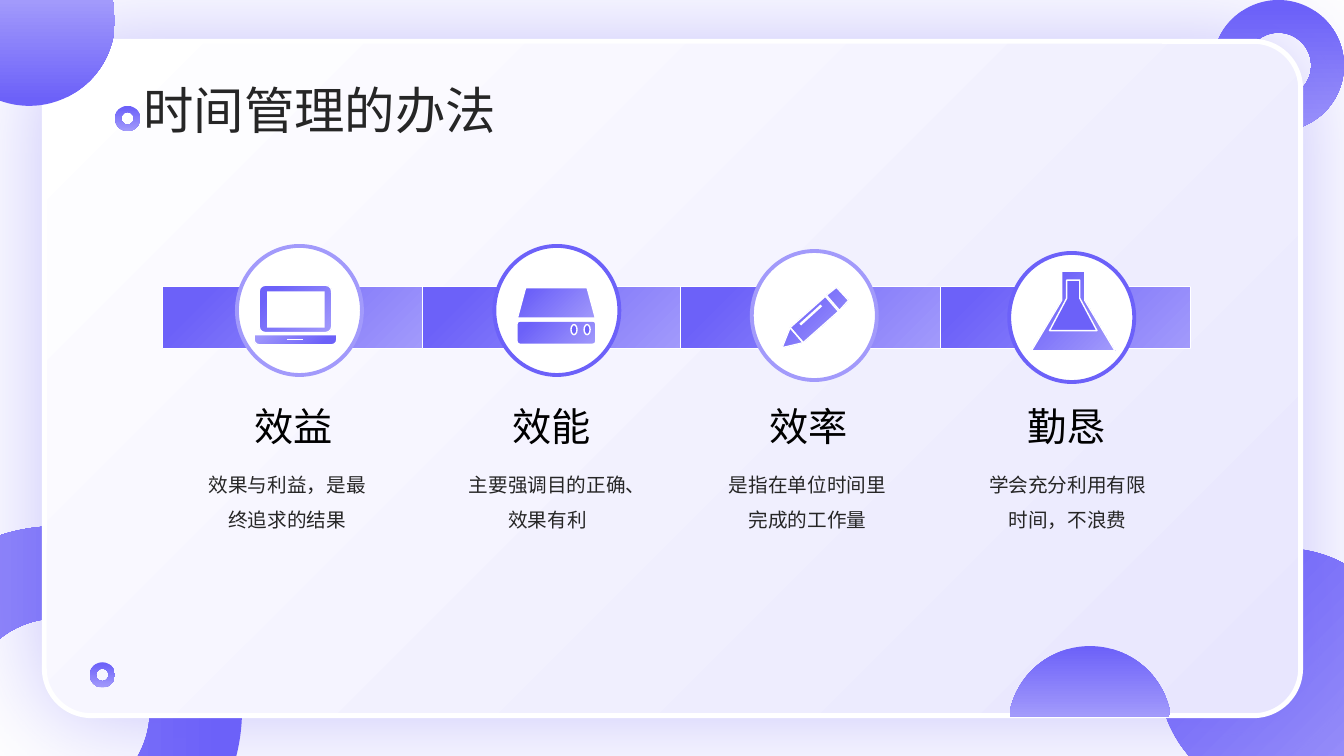
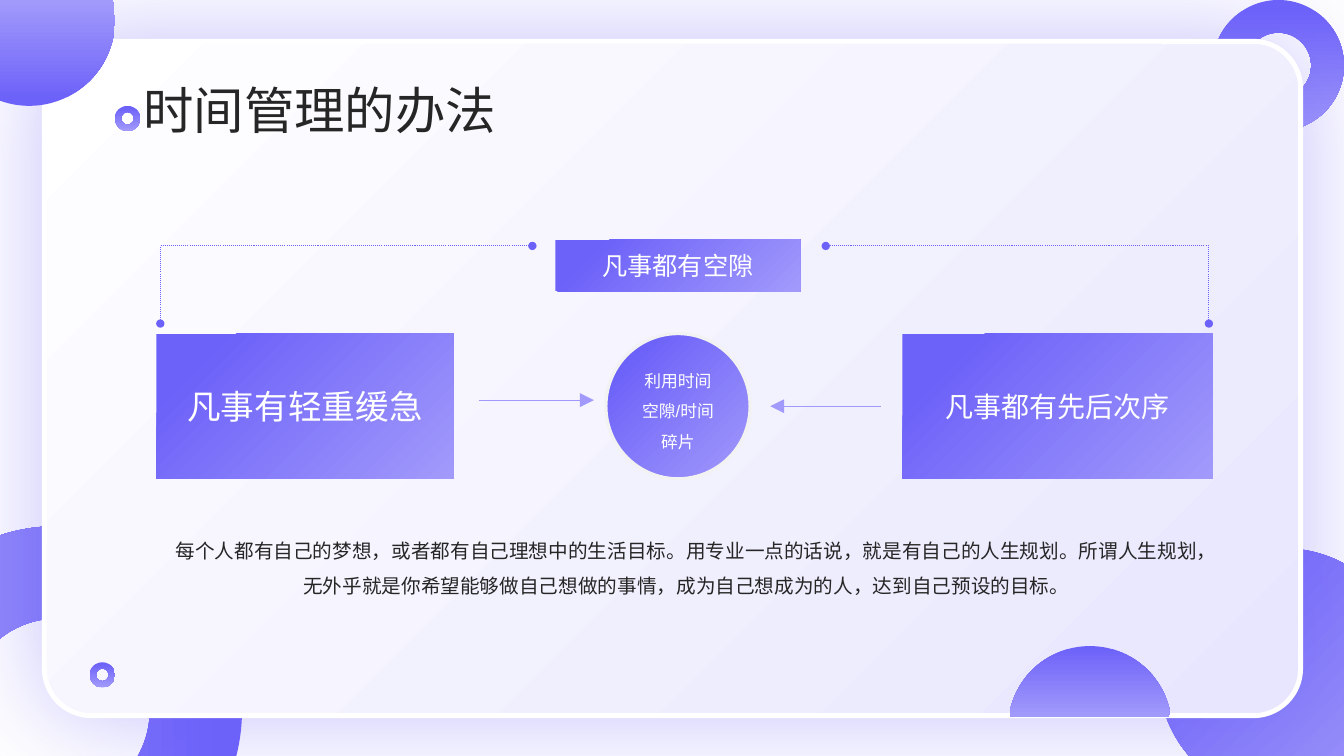
import math
from collections import namedtuple
from dataclasses import dataclass

import lxml.etree
import pptx
import pptx.dml.color
import pptx.enum.dml
import pptx.enum.shapes
import pptx.enum.text
import pptx.oxml.ns
import pptx.util

Inches = pptx.util.Inches
Preset = pptx.enum.shapes.MSO_SHAPE
Align = pptx.enum.text.PP_ALIGN
Anchor = pptx.enum.text.MSO_ANCHOR
qn = pptx.oxml.ns.qn
Box = namedtuple("Box", "left top width height")


@dataclass(frozen=True)
class Theme:
    deep: str = "6C61F9"
    light: str = "A29AFB"
    mist: str = "E8E6FE"
    white: str = "FFFFFF"
    rim: str = "F2F2F2"
    ink: str = "262626"
    black: str = "000000"
    title_font: str = "Noto Sans CJK SC"
    body_font: str = "Arial"
    title: int = 36
    heading: int = 28
    block_large: int = 24
    block: int = 20
    block_small: int = 18
    body: int = 14
    disc: int = 12


THEME = Theme()
SLIDE = Box(0, 0, 13.33, 7.5)
TITLE = Box(1.32, 0.73, 6, 0.71)


@dataclass(frozen=True)
class Gradient:
    """Two colours, the place of the first in percent, clockwise degrees."""
    angle: int = 45
    start: int = 15
    first: str = THEME.deep
    last: str = THEME.light


DIAGONAL = Gradient()
DOWN = Gradient(90, 5)
UP = Gradient(270, 5)


# Drawing helpers
def colour(code):
    return pptx.dml.color.RGBColor.from_string(code)


def shifted(box, left, top, width, height):
    return Box(box.left + left, box.top + top, width, height)


def paint(shape, fill=None, line=None, weight=1):
    shape.shadow.inherit = False
    if isinstance(fill, Gradient):
        shape.fill.gradient()
        shape.fill.gradient_angle = (360 - fill.angle) % 360
        first, last = shape.fill.gradient_stops
        first.position, first.color.rgb = fill.start / 100, colour(fill.first)
        last.position, last.color.rgb = 1, colour(fill.last)
    elif fill:
        shape.fill.solid()
        shape.fill.fore_color.rgb = colour(fill)
    else:
        shape.fill.background()
    if line:
        shape.line.color.rgb = colour(line)
        shape.line.width = pptx.util.Pt(weight)
    else:
        shape.line.fill.background()
    return shape


def add_preset(page, preset, box, fill, adjust=(), **outline):
    shape = page.shapes.add_shape(preset, *map(Inches, box))
    for index, value in enumerate(adjust):
        shape.adjustments[index] = value
    return paint(shape, fill, **outline)


def add_outline(page, origin, contours, fill=None, close=True, **outline):
    def place(point):
        return Inches(origin.left + point[0]), Inches(origin.top + point[1])

    builder = page.shapes.build_freeform(*place(contours[0][0]))
    for index, contour in enumerate(contours):
        if index:
            builder.move_to(*place(contour[0]))
        builder.add_line_segments([place(point) for point in contour[1:]], close)
    return paint(builder.convert_to_shape(), fill, **outline)


def add_line(page, origin, start, end, line, weight):
    ends = [Inches(base + offset) for point in (start, end)
            for base, offset in zip(origin, point)]
    connector = page.shapes.add_connector(
        pptx.enum.shapes.MSO_CONNECTOR.STRAIGHT, *ends)
    connector.line.color.rgb = colour(line)
    connector.line.width = pptx.util.Pt(weight)
    lxml.etree.SubElement(connector.element.spPr, qn("a:effectLst"))
    return connector


def add_end(shape, side, kind, size="med"):
    outline = shape.element.spPr.find(qn("a:ln"))
    lxml.etree.SubElement(outline, qn("a:" + side), type=kind, w=size, len=size)


def arc(centre, radius, start, end, steps=60):
    angles = (math.radians(start + (end - start) * step / steps)
              for step in range(steps + 1))
    return [(centre[0] + radius * math.cos(angle),
             centre[1] + radius * math.sin(angle)) for angle in angles]


def write(shape, text, size=THEME.body, ink=THEME.ink, font=THEME.body_font,
          align=Align.CENTER, anchor=Anchor.MIDDLE, spacing=1.0, inset=None):
    frame = shape.text_frame
    frame.word_wrap = True
    frame.auto_size = pptx.enum.text.MSO_AUTO_SIZE.NONE
    frame.vertical_anchor = anchor
    if inset is not None:
        frame.margin_left = frame.margin_right = Inches(inset)
        frame.margin_top = frame.margin_bottom = Inches(inset)
    para = frame.paragraphs[0]
    para.alignment, para.line_spacing = align, spacing
    span = para.add_run()
    span.text = text
    span.font.size, span.font.name = pptx.util.Pt(size), font
    span.font.color.rgb = colour(ink)
    lxml.etree.SubElement(span.font._element, qn("a:ea"), typeface=font)


def add_text(page, box, text, **style):
    write(page.shapes.add_textbox(*map(Inches, box)), text, **style)


# Shared frame: card, rings and discs
def add_ring(page, left, top, size):
    return add_preset(page, Preset.DONUT, Box(left, top, size, size), DOWN, (0.25,))


def draw_frame(page, box):
    add_ring(page, -1.26, 5.22, 3.66).rotation = 90
    add_preset(page, Preset.OVAL, Box(11.49, 5.44, 2.49, 2.49), Gradient(start=0))
    add_ring(page, box.width - 1.3, 0, 1.3)
    card = add_preset(page, Preset.ROUNDED_RECTANGLE, Box(0.44, 0.41, 12.46, 6.69),
                      Gradient(225, 0, THEME.mist, THEME.white), (0.07,),
                      line=THEME.white, weight=3.5)
    glow = lxml.etree.SubElement(
        card.element.spPr.find(qn("a:effectLst")), qn("a:outerShdw"),
        blurRad=str(pptx.util.Pt(78)), dist="0", dir="0", algn="ctr", rotWithShape="0")
    tint = lxml.etree.SubElement(glow, qn("a:srgbClr"), val=THEME.deep)
    lxml.etree.SubElement(tint, qn("a:alpha"), val="40000")
    corner = [(0, 0), (0, 1)] + arc((0.29, 0.2), 0.85, 110, -13.6)
    add_outline(page, box, [corner], UP)
    add_ring(page, 1.14, 1.05, 0.25)
    add_ring(page, 0.89, 6.57, 0.25)
    dome = [(10.02, 7.11)] + arc((10.81, 7.22), 0.81, 192, 348) + [(11.59, 7.11)]
    add_outline(page, box, [dome], Gradient(90, 0))


def build_layout(layout, page):
    """Draw the frame on a fresh page and move it behind the layout's title."""
    for holder in list(layout.placeholders):
        if holder.placeholder_format.type != pptx.enum.shapes.PP_PLACEHOLDER.TITLE:
            holder.element.getparent().remove(holder.element)
    title = layout.placeholders[0]
    title.left, title.top, title.width, title.height = map(Inches, TITLE)
    draw_frame(page, SLIDE)
    parts = [shape for shape in page.shapes if not shape.is_placeholder]
    for index, shape in enumerate(parts):
        shape.element.nvSpPr.cNvPr.set("id", str(100 + index))
        layout.shapes._spTree.insert(2 + index, shape.element)


def add_title(page, text):
    write(page.shapes.title, text, size=THEME.title, font=THEME.title_font,
          align=Align.LEFT)


# Icons, each placed from the corner of its disc
def draw_laptop(page, disc):
    edge = {"line": THEME.white}
    add_preset(page, Preset.ROUNDED_RECTANGLE, shifted(disc, 0.22, 0.39, 0.72, 0.47),
               DIAGONAL, (0.13,), **edge)
    add_preset(page, Preset.RECTANGLE, shifted(disc, 0.3, 0.45, 0.57, 0.36), THEME.white)
    base = add_preset(page, Preset.ROUND_2_SAME_RECTANGLE,
                      shifted(disc, 0.17, 0.88, 0.82, 0.1), DIAGONAL, (0.5, 0), **edge)
    base.rotation = 180
    add_line(page, disc, (0.5, 0.93), (0.66, 0.93), THEME.white, 1)


def draw_drive(page, disc):
    edge = {"line": THEME.white, "weight": 3}
    add_preset(page, Preset.ROUNDED_RECTANGLE, shifted(disc, 0.21, 0.73, 0.81, 0.26),
               DIAGONAL, (0.17,), **edge)
    add_preset(page, Preset.TRAPEZOID, shifted(disc, 0.21, 0.4, 0.81, 0.33),
               DIAGONAL, (0.27,), **edge)
    for left in (0.76, 0.89):
        add_preset(page, Preset.OVAL, shifted(disc, left, 0.78, 0.06, 0.1),
                   THEME.deep, line=THEME.white)


def draw_pencil(page, disc):
    body = [(0.38, 0.76), (0.73, 0.45), (0.86, 0.6), (0.51, 0.91)]
    eraser = [(0.74, 0.44), (0.84, 0.36), (0.96, 0.49), (0.87, 0.59)]
    tip = [(0.38, 0.76), (0.51, 0.91), (0.3, 0.96)]
    add_outline(page, disc, [body, eraser, tip], DIAGONAL, line=THEME.white)
    add_line(page, disc, (0.48, 0.73), (0.69, 0.54), THEME.white, 1.75)


def draw_flask(page, disc):
    add_line(page, disc, (0.47, 0.18), (0.8, 0.17), THEME.white, 4.75)
    glass = [(0.52, 0.18), (0.75, 0.18), (0.75, 0.47),
             (1.05, 0.97), (0.22, 0.97), (0.52, 0.47)]
    liquid = [(0.57, 0.27), (0.7, 0.27), (0.7, 0.45),
              (0.87, 0.77), (0.4, 0.77), (0.57, 0.45)]
    add_outline(page, disc, [glass], DIAGONAL, line=THEME.white)
    add_outline(page, disc, [liquid], THEME.deep, line=THEME.white)


# Slide bodies
METHODS = [
    (draw_laptop, 0, THEME.light, "效益", "效果与利益，是最终追求的结果"),
    (draw_drive, 0, THEME.deep, "效能", "主要强调目的正确、效果有利"),
    (draw_pencil, 0.05, THEME.light, "效率", "是指在单位时间里完成的工作量"),
    (draw_flask, 0.07, THEME.deep, "勤恳", "学会充分利用有限时间，不浪费"),
]


def draw_methods(page, box):
    # The last bar lies under the third
    for left in (0, 7.62, 2.58, 5.14):
        add_preset(page, Preset.RECTANGLE, shifted(box, left, 0.4, 2.58, 0.62),
                   DIAGONAL, line=THEME.white)
    step = 7.66 / (len(METHODS) - 1)
    for index, (draw_icon, drop, rim, heading, detail) in enumerate(METHODS):
        disc = shifted(box, 0.74 + index * step, drop, 1.24, 1.28)
        add_preset(page, Preset.OVAL, disc, THEME.white, line=rim, weight=2.75)
        draw_icon(page, disc)
        add_text(page, shifted(box, 0.6 + index * step, 1.5, 1.41, 0.57), heading,
                 size=THEME.heading, ink=THEME.black)
        add_text(page, shifted(box, 0.14 + index * 2.58, 1.89, 2.2, 1.18), detail,
                 spacing=1.5, inset=0.24)


def draw_principles(page, box):
    # Labelled blocks
    bar, oval = Preset.RECTANGLE, Preset.OVAL
    blocks = [
        (bar, (3.96, 0, 2.43, 0.51), "凡事都有空隙", THEME.block_small, 1.0, None),
        (bar, (0, 0.93, 2.95, 1.44), "凡事有轻重缓急", THEME.block_large, 1.0, None),
        (bar, (7.4, 0.93, 3.08, 1.44), "凡事都有先后次序", THEME.block, 1.0, None),
        (oval, (4.46, 0.93, 1.43, 1.44), "利用时间空隙/时间碎片", THEME.disc, 1.5, THEME.rim),
    ]
    for preset, place, label, size, spacing, rim in blocks:
        block = add_preset(page, preset, shifted(box, *place), DIAGONAL,
                           line=rim, weight=2.25)
        write(block, label, size=size, ink=THEME.white, spacing=spacing)
    # Dotted brackets
    for outer, inner in ((0.04, 3.73), (10.44, 6.64)):
        bracket = add_outline(page, box, [[(outer, 0.83), (outer, 0.06), (inner, 0.06)]],
                              close=False, line=THEME.deep, weight=0.75)
        bracket.line.dash_style = pptx.enum.dml.MSO_LINE.ROUND_DOT
        for side in ("headEnd", "tailEnd"):
            add_end(bracket, side, "oval")
    # Arrows towards the disc
    for start, end, height in ((3.2, 4.34, 1.59), (7.19, 6.09, 1.65)):
        arrow = add_line(page, box, (start, height), (end, height), THEME.light, 0.75)
        add_end(arrow, "tailEnd", "triangle", "lg")
    add_text(page, shifted(box, 0.04, 2.8, 10.44, 0.77),
             "每个人都有自己的梦想，或者都有自己理想中的生活目标。用专业一点的话说，"
             "就是有自己的人生规划。所谓人生规划，无外乎就是你希望能够做自己想做的事情，"
             "成为自己想成为的人，达到自己预设的目标。", spacing=1.5, anchor=Anchor.TOP)


def main():
    deck = pptx.Presentation()
    deck.slide_width, deck.slide_height = Inches(SLIDE.width), Inches(SLIDE.height)
    layout = deck.slide_layouts[5]
    bodies = ((draw_methods, Box(1.61, 2.44, 10.2, 3.07)),
              (draw_principles, Box(1.55, 2.38, 10.48, 3.57)))
    pages = [deck.slides.add_slide(layout) for body in bodies]
    build_layout(layout, pages[0])
    for page, (draw_body, box) in zip(pages, bodies):
        add_title(page, "时间管理的办法")
        draw_body(page, box)
    deck.save("out.pptx")


if __name__ == "__main__":
    main()
